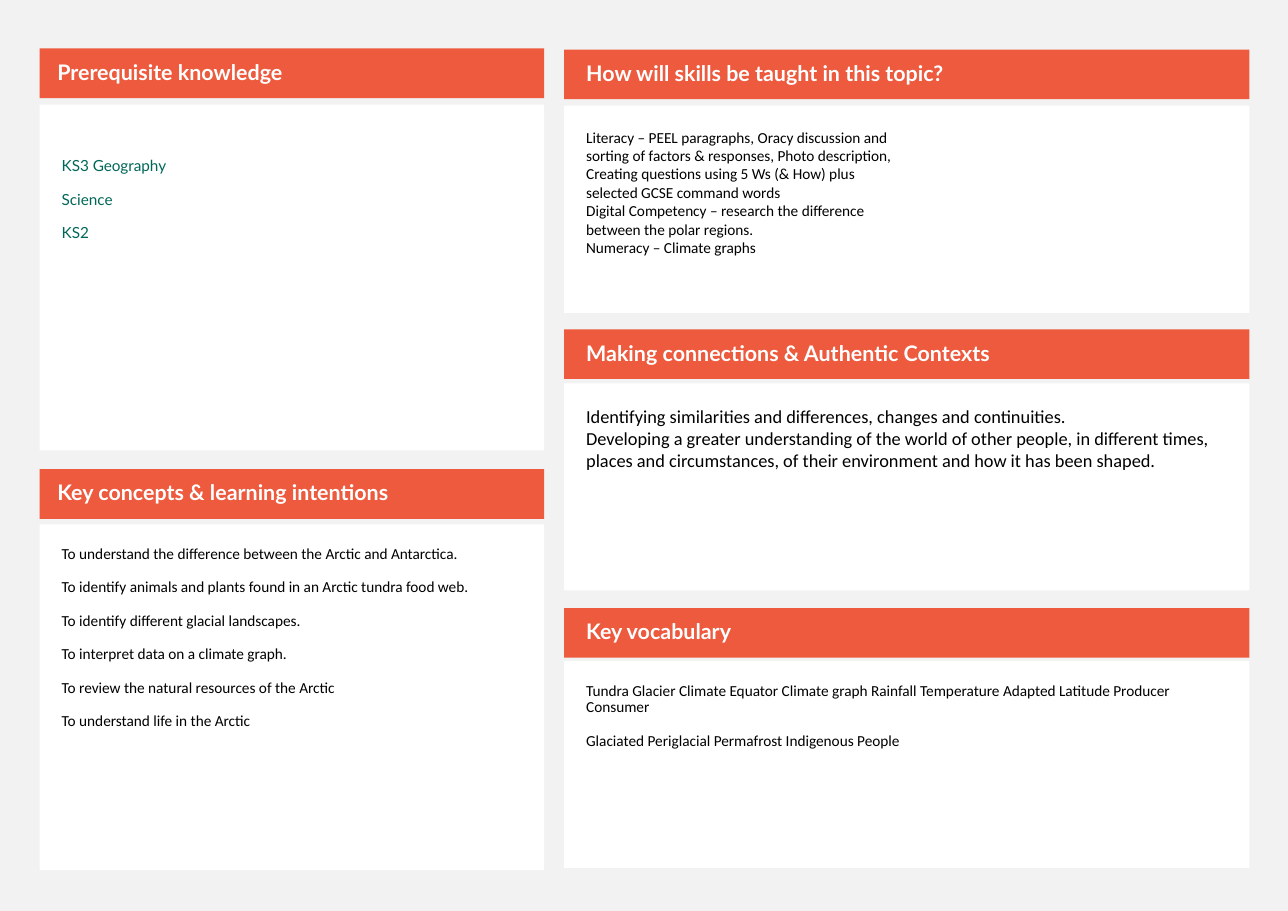
from dataclasses import dataclass

from pptx import Presentation
from pptx.dml.color import RGBColor
from pptx.enum.shapes import MSO_SHAPE
from pptx.enum.text import MSO_ANCHOR, PP_ALIGN
from pptx.shapes.autoshape import Shape
from pptx.slide import Slide
from pptx.util import Inches, Pt

RECT = MSO_SHAPE.RECTANGLE
TOP, MIDDLE = MSO_ANCHOR.TOP, MSO_ANCHOR.MIDDLE
LEFT = PP_ALIGN.LEFT

GREY = RGBColor(0xF2, 0xF2, 0xF2)
ORANGE = RGBColor(0xED, 0x5A, 0x3E)
WHITE = RGBColor(0xFF, 0xFF, 0xFF)
BLACK = RGBColor(0x00, 0x00, 0x00)
GREEN = RGBColor(0x00, 0x67, 0x58)

HEAD_HEIGHT = 0.45
PAD = 0.2


@dataclass(frozen=True)
class Column:
    left: float
    width: float
    height: float
    indent: float


@dataclass(frozen=True)
class Panel:
    column: Column
    head: float
    body: float
    title: str
    lines: tuple[str, ...]
    size: int = 10
    font: str = "Calibri"
    color: RGBColor = BLACK
    inset: float = PAD
    spaced: bool = True
    split: int = 1


NARROW = Column(left=0.36, width=4.58, height=3.14, indent=0.16)
WIDE = Column(left=5.12, width=6.22, height=1.88, indent=PAD)

PANELS = (
    Panel(NARROW, 0.44, 0.95, "Prerequisite knowledge",
          ("KS3 Geography", "Science", "KS2"),
          font="Lato", color=GREEN, inset=0.49),
    Panel(NARROW, 4.26, 4.76, "Key concepts & learning intentions", (
        "To understand the difference between the Arctic and Antarctica.",
        "To identify animals and plants found in an Arctic tundra food web.",
        "To identify different glacial landscapes.",
        "To interpret data on a climate graph.",
        "To review the natural resources of the Arctic",
        "To understand life in the Arctic",
    )),
    Panel(WIDE, 0.45, 0.96, "How will skills be taught in this topic?", (
        "Literacy – PEEL paragraphs, Oracy discussion and sorting of factors "
        "& responses, Photo description, Creating questions using 5 Ws "
        "(& How) plus selected GCSE command words",
        "Digital Competency – research the difference between the polar regions.",
        "Numeracy – Climate graphs",
    ), spaced=False, split=2),
    Panel(WIDE, 2.99, 3.48, "Making connections & Authentic Contexts", (
        "Identifying similarities and differences, changes and continuities.",
        "Developing a greater understanding of the world of other people, "
        "in different times, places and circumstances, of their environment "
        "and how it has been shaped.",
    ), size=12, spaced=False),
    Panel(WIDE, 5.52, 6.0, "Key vocabulary", (
        "Tundra Glacier Climate Equator Climate graph Rainfall Temperature "
        "Adapted Latitude Producer Consumer",
        "Glaciated Periglacial Permafrost Indigenous People",
    )),
)


def add_box(slide: Slide, column: Column, top: float, height: float,
            fill: RGBColor) -> Shape:
    box = slide.shapes.add_shape(RECT, Inches(column.left), Inches(top),
                                 Inches(column.width), Inches(height))
    box.shadow.inherit = False
    box.fill.solid()
    box.fill.fore_color.rgb = fill
    box.line.fill.background()
    return box


def write(box: Shape, lines: tuple[str, ...], *, size: int, font: str,
          color: RGBColor, insets: tuple[float, float, float, float],
          anchor: MSO_ANCHOR = TOP, bold: bool = False, spaced: bool = True,
          split: int = 1) -> None:
    frame = box.text_frame
    frame.word_wrap = True
    frame.vertical_anchor = anchor
    (frame.margin_left, frame.margin_top,
     frame.margin_right, frame.margin_bottom) = map(Inches, insets)
    if split > 1:
        props = frame._txBody.bodyPr
        props.set("numCol", str(split))
        props.set("spcCol", str(Inches(PAD)))
    for index, line in enumerate(lines):
        para = frame.add_paragraph() if index else frame.paragraphs[0]
        para.alignment = LEFT
        if spaced:
            para.line_spacing = 0.9
            para.space_before = Pt(11)
        run = para.add_run()
        run.text = line
        run.font.size = Pt(size)
        run.font.name = font
        run.font.bold = bold
        run.font.color.rgb = color


def add_panel(slide: Slide, panel: Panel) -> None:
    column = panel.column
    # White body
    body = add_box(slide, column, panel.body, column.height, WHITE)
    write(body, panel.lines, size=panel.size, font=panel.font,
          color=panel.color, insets=(PAD, panel.inset, PAD, PAD),
          spaced=panel.spaced, split=panel.split)
    # Orange heading
    head = add_box(slide, column, panel.head, HEAD_HEIGHT, ORANGE)
    write(head, (panel.title,), size=14, font="Lato", color=WHITE, bold=True,
          insets=(column.indent, 0.05, 0.1, 0.05), anchor=MIDDLE)


def main() -> None:
    deck = Presentation()
    deck.slide_width, deck.slide_height = Inches(11.69), Inches(8.27)
    slide = deck.slides.add_slide(deck.slide_layouts[6])
    slide.background.fill.solid()
    slide.background.fill.fore_color.rgb = GREY
    for panel in PANELS:
        add_panel(slide, panel)
    deck.save("out.pptx")


if __name__ == "__main__":
    main()
